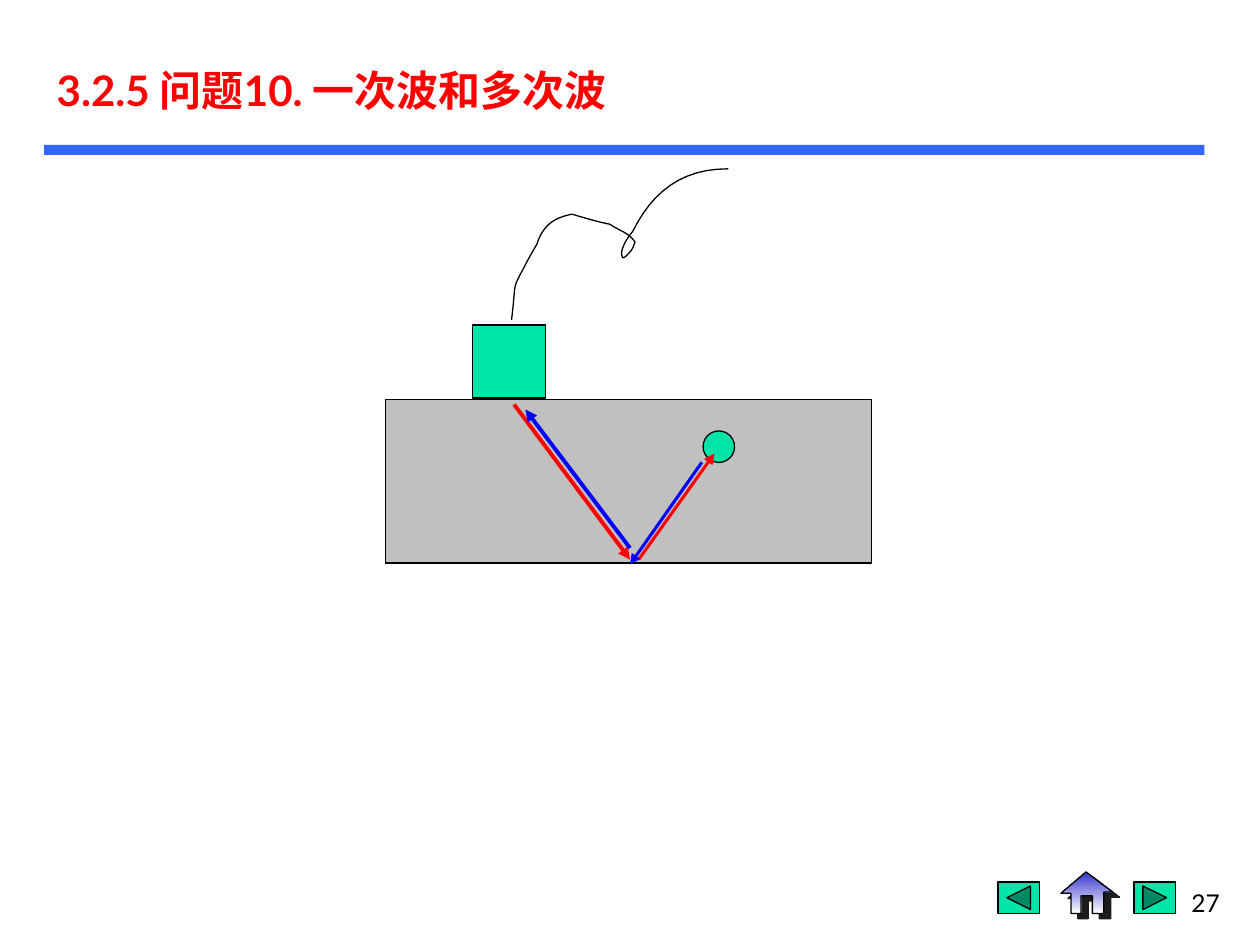
import pptx
import pptx.util
import pptx.dml.color
import pptx.enum.shapes
import pptx.enum.text
import pptx.oxml
import pptx.oxml.ns

Inches = pptx.util.Inches
Pt = pptx.util.Pt
SHAPES = pptx.enum.shapes.MSO_SHAPE
ALIGN = pptx.enum.text.PP_ALIGN
ANCHOR = pptx.enum.text.MSO_ANCHOR

FONT = "Lato"
COLORS = {
    "rule": "3366FF", "green": "00E4A8", "block": "C0C0C0",
    "red": "FF0000", "blue": "0000FF", "black": "000000",
    "roof": "3333CC", "white": "FFFFFF", "shadow": "1C1C1C",
}
TITLE = "3.2.5 问题10. 一次波和多次波"
PAGE_NUMBER = "27"

RULE = (SHAPES.RECTANGLE, (0.35, 1.15, 9.21, 0.08), "rule", None)
BUTTONS = [
    (SHAPES.ACTION_BUTTON_BACK_OR_PREVIOUS, (7.92, 7, 0.33, 0.25), "green", "black"),
    (SHAPES.ACTION_BUTTON_FORWARD_OR_NEXT, (9, 7, 0.33, 0.25), "green", "black"),
]
TEST_BLOCK = (SHAPES.RECTANGLE, (3.06, 3.17, 3.86, 1.3), "block", "black")
DEFECT = (SHAPES.OVAL, (5.58, 3.42, 0.25, 0.25), "green", "black")
PROBE = (SHAPES.RECTANGLE, (3.75, 2.58, 0.58, 0.58), "green", "black")
INCIDENT_WAVE = ((4.08, 3.21), (5, 4.44), "red", 2.25)
REFLECTED_WAVES = [
    ((5.07, 4.44), (5.67, 3.6), "red", 1.75),
    ((5.57, 3.67), (5, 4.48), "blue", 1.75),
    ((5, 4.35), (4.17, 3.25), "blue", 2.25),
]
HOUSE = [
    (8.62, 6.92), (8.42, 7.09), (8.5, 7.09), (8.5, 7.25), (8.58, 7.25), (8.58, 7.11),
    (8.67, 7.11), (8.67, 7.25), (8.76, 7.25), (8.76, 7.08), (8.83, 7.08),
]
CABLE_START = (4.06, 2.54)
CABLE_CURVES = [
    ((4.1, 2.22), (4.06, 2.31), (4.16, 2.12)),
    ((4.19, 2.06), (4.26, 1.94), (4.26, 1.94)),
    ((4.31, 1.79), (4.39, 1.73), (4.54, 1.7)),
    ((4.64, 1.73), (4.74, 1.76), (4.84, 1.78)),
    ((4.93, 1.84), (4.98, 1.84), (5.04, 1.92)),
    ((5.03, 1.95), (5.02, 1.98), (5, 2)),
    ((4.98, 2.02), (4.95, 2.06), (4.94, 2.04)),
    ((4.91, 1.99), (4.99, 1.87), (5.02, 1.84)),
    ((5.18, 1.52), (5.41, 1.34), (5.78, 1.34)),
]
CURVE_STEPS = 12


def rgb(name):
    return pptx.dml.color.RGBColor.from_string(COLORS[name])


def element(xml):
    return pptx.oxml.parse_xml(xml.replace(">", f" {pptx.oxml.ns.nsdecls('a')}>", 1)
                               if not xml.endswith("/>") or xml.count("<") > 1
                               else xml.replace("/>", f" {pptx.oxml.ns.nsdecls('a')}/>"))


def write_text(shape, text, size, color, bold=False, align=ALIGN.LEFT, anchor=ANCHOR.TOP):
    frame = shape.text_frame
    frame.word_wrap = True
    frame.auto_size = pptx.enum.text.MSO_AUTO_SIZE.NONE
    frame.vertical_anchor = anchor
    paragraph = frame.paragraphs[0]
    paragraph.alignment = align
    run = paragraph.add_run()
    run.text = text
    run.font.name = FONT
    run.font.size = Pt(size)
    run.font.bold = bold
    run.font.color.rgb = rgb(color)


def set_outline(shape, color, width=0.75):
    if color is None:
        shape.line.fill.background()
    else:
        shape.line.color.rgb = rgb(color)
        shape.line.width = Pt(width)


def add_preset(slide, kind, box, fill, outline):
    shape = slide.shapes.add_shape(kind, *map(Inches, box))
    shape.shadow.inherit = False
    shape.fill.solid()
    shape.fill.fore_color.rgb = rgb(fill)
    set_outline(shape, outline)


def add_arrow(slide, start, end, color, width):
    arrow = slide.shapes.add_connector(
        pptx.enum.shapes.MSO_CONNECTOR.STRAIGHT, *map(Inches, start + end))
    set_outline(arrow, color, width)
    arrow.line._get_or_add_ln().append(element('<a:tailEnd type="triangle"/>'))
    arrow._element.spPr.append(element("<a:effectLst/>"))


def add_outline(slide, points, close):
    vertices = [tuple(map(Inches, point)) for point in points]
    builder = slide.shapes.build_freeform(*vertices[0])
    builder.add_line_segments(vertices[1:], close=close)
    shape = builder.convert_to_shape()
    shape.shadow.inherit = False
    set_outline(shape, "black")
    return shape


def add_house(slide):
    house = add_outline(slide, HOUSE, True)
    house.fill.gradient()
    house.fill.gradient_angle = 270
    for stop, color, position in zip(house.fill.gradient_stops, ("roof", "white"), (0, 1)):
        stop.color.rgb = rgb(color)
        stop.position = position
    effects = house._element.spPr.find(pptx.oxml.ns.qn("a:effectLst"))
    effects.append(element(
        f'<a:outerShdw blurRad="0" dist="{Pt(5)}" dir="{37 * 60000}" algn="ctr" rotWithShape="0">'
        f'<a:srgbClr val="{COLORS["shadow"]}"/></a:outerShdw>'))


def cable_points():
    points = [CABLE_START]
    for first, second, end in CABLE_CURVES:
        start = points[-1]
        for step in range(1, CURVE_STEPS + 1):
            t = step / CURVE_STEPS
            weights = ((1 - t) ** 3, 3 * t * (1 - t) ** 2, 3 * t * t * (1 - t), t ** 3)
            points.append(tuple(
                sum(weight * value for weight, value in zip(weights, values))
                for values in zip(start, first, second, end)))
    return points


def main():
    presentation = pptx.Presentation()
    presentation.slide_width, presentation.slide_height = Inches(10), Inches(7.5)
    slide = presentation.slides.add_slide(presentation.slide_layouts[5])

    title = slide.shapes.title
    title.left, title.top, title.width, title.height = map(Inches, (0.35, 0.46, 6.69, 0.61))
    write_text(title, TITLE, size=24, color="red", bold=True)

    add_preset(slide, *RULE)
    add_house(slide)
    for button in BUTTONS:
        add_preset(slide, *button)
    number = slide.shapes.add_textbox(*map(Inches, (7.7, 6.83, 2.08, 0.5)))
    write_text(number, PAGE_NUMBER, size=14, color="black",
               align=ALIGN.RIGHT, anchor=ANCHOR.BOTTOM)

    add_preset(slide, *TEST_BLOCK)
    add_arrow(slide, *INCIDENT_WAVE)
    add_preset(slide, *DEFECT)
    for wave in REFLECTED_WAVES:
        add_arrow(slide, *wave)
    add_preset(slide, *PROBE)
    cable = add_outline(slide, cable_points(), False)
    cable.fill.background()

    presentation.save("out.pptx")


if __name__ == "__main__":
    main()
